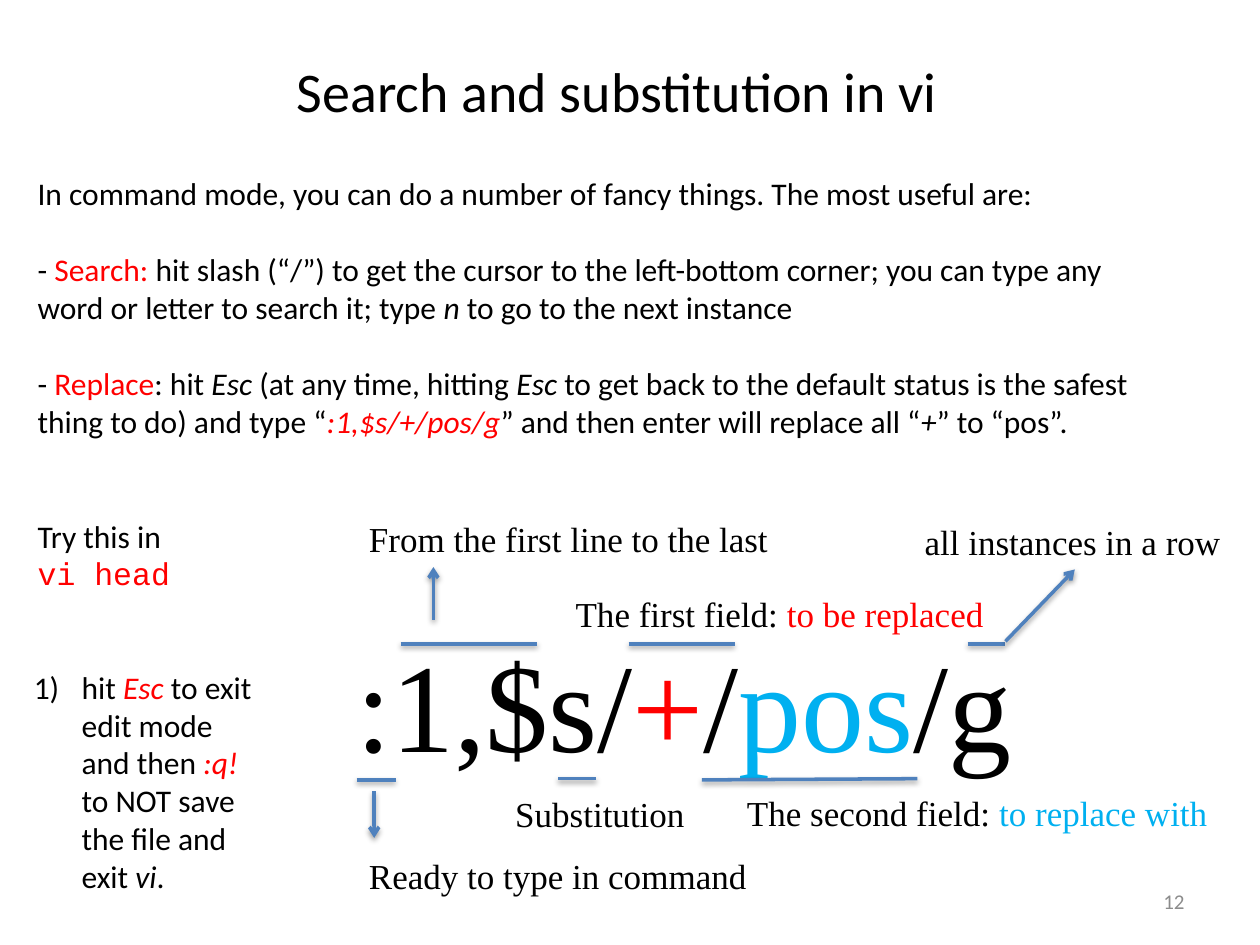
from lxml import etree
from pptx import Presentation
from pptx.dml.color import RGBColor
from pptx.enum.shapes import MSO_CONNECTOR
from pptx.enum.text import MSO_ANCHOR, MSO_AUTO_SIZE, PP_ALIGN
from pptx.oxml.ns import qn
from pptx.util import Inches, Pt

STRAIGHT = MSO_CONNECTOR.STRAIGHT
TOP, MIDDLE = MSO_ANCHOR.TOP, MSO_ANCHOR.MIDDLE
LEFT, CENTER, RIGHT = PP_ALIGN.LEFT, PP_ALIGN.CENTER, PP_ALIGN.RIGHT
NO_FIT = MSO_AUTO_SIZE.NONE
TITLE_ONLY = 5

COLORS = {"black": "000000", "red": "FF0000", "cyan": "00B0F0",
          "blue": "4F81BD", "gray": "8C8C8C"}
SANS, SERIF, MONO = "Calibri", "Times New Roman", "Courier New"
RED, CYAN = {"color": "red"}, {"color": "cyan"}
ITALIC = {"italic": True}
RED_ITALIC = {**RED, **ITALIC}

INTRO = [
    (0, [("In command mode, you can do a number of fancy things. "
          "The most useful are:", {})]),
    (22, [("- ", {}), ("Search:", RED),
          (" hit slash (“/”) to get the cursor to the left-bottom corner; you can "
           "type any word or letter to search it; type ", {}),
          ("n ", ITALIC), ("to go to the next instance", {})]),
    (22, [("- ", {}), ("Replace", RED), (": hit ", {}), ("Esc ", ITALIC),
          ("(at any time, hitting ", {}), ("Esc ", ITALIC),
          ("to get back to the default status is the safest thing to do) "
           "and type “", {}),
          (":1,$s/+/pos/g", RED_ITALIC),
          ("” and then enter will replace all “", {}), ("+", ITALIC),
          ("” to “pos”.", {})]),
    (44, [("Try this in", {})]),
    (0, [("vi head", {**RED, "font": MONO})]),
]
COMMAND = [(":1,$s/", {}), ("+", RED), ("/", {}), ("pos", CYAN), ("/g", {})]
EXIT_STEP = [("hit ", {}), ("Esc ", RED_ITALIC), ("to exit edit mode and then ", {}),
             (":q! ", RED_ITALIC), ("to NOT save the file and exit ", {}),
             ("vi", ITALIC), (".", {})]
LABELS = [
    (2.83, 6.73, 3.26, [("Ready to type in command", {})]),
    (2.83, 4.06, 3.45, [("From the first line to the last", {})]),
    (3.99, 6.24, 1.58, [("Substitution", {})]),
    (4.47, 4.65, 3.49, [("The first field: ", {}), ("to be replaced", RED)]),
    (5.83, 6.23, 3.92, [("The second field: ", {}), ("to replace with", CYAN)]),
    (7.24, 4.08, 2.58, [("all instances in a row", {})]),
]
MARKS = [(2.83, 6.19, 3.14, 6.19), (3.18, 5.11, 4.26, 5.11),
         (4.43, 6.18, 4.73, 6.18), (4.99, 5.11, 5.83, 5.11),
         (5.57, 6.19, 7.28, 6.18), (7.68, 5.11, 7.98, 5.11)]
ARROWS = [(2.97, 6.28, 2.97, 6.65), (3.44, 4.92, 3.44, 4.5),
          (7.98, 5.09, 8.53, 4.52)]


def write_runs(p, runs, size, font=SANS, color="black", align=LEFT, before=0):
    p.alignment = align
    p.space_before = Pt(before)
    for text, fmt in runs:
        r = p.add_run()
        r.text = text
        r.font.size = Pt(size)
        r.font.name = fmt.get("font", font)
        r.font.italic = fmt.get("italic", False)
        r.font.color.rgb = RGBColor.from_string(COLORS[fmt.get("color", color)])


def add_text(slide, box, paragraphs, size, wrap=True, anchor=TOP, **fmt):
    sp = slide.shapes.add_textbox(*map(Inches, box))
    tf = sp.text_frame
    tf.word_wrap = wrap
    tf.vertical_anchor = anchor
    for i, (before, runs) in enumerate(paragraphs):
        p = tf.add_paragraph() if i else tf.paragraphs[0]
        write_runs(p, runs, size, before=before, **fmt)
    return sp


def set_title(slide, box, text):
    sp = slide.shapes.title
    sp.left, sp.top, sp.width, sp.height = map(Inches, box)
    tf = sp.text_frame
    tf.auto_size = NO_FIT
    tf.word_wrap = False
    tf.vertical_anchor = TOP
    write_runs(tf.paragraphs[0], [(text, {})], 32, align=CENTER)


def number_paragraph(p, indent):
    pPr = p._p.get_or_add_pPr()
    pPr.set("marL", str(Inches(indent)))
    pPr.set("indent", str(-Inches(indent)))
    etree.SubElement(pPr, qn("a:buFont"), typeface="+mj-lt")
    etree.SubElement(pPr, qn("a:buAutoNum"), type="arabicParenR")


def add_line(slide, ends, arrow=False):
    line = slide.shapes.add_connector(STRAIGHT, *map(Inches, ends)).line
    line.color.rgb = RGBColor.from_string(COLORS["blue"])
    line.width = Pt(2)
    if arrow:
        etree.SubElement(line._get_or_add_ln(), qn("a:tailEnd"), type="arrow")


def main():
    prs = Presentation()
    prs.slide_width, prs.slide_height = Inches(10), Inches(7.5)
    slide = prs.slides.add_slide(prs.slide_layouts[TITLE_ONLY])
    set_title(slide, (2.21, 0.4, 5.38, 0.64), "Search and substitution in vi")
    add_text(slide, (7.17, 6.95, 2.33, 0.4), [(0, [("12", {})])], 12,
             anchor=MIDDLE, color="gray", align=RIGHT)
    add_text(slide, (0.2, 1.33, 9.15, 3.74), INTRO, 18)
    add_text(slide, (2.73, 4.92, 6.04, 1.31), [(0, COMMAND)], 72, font=SERIF)
    for ends in MARKS:
        add_line(slide, ends)
    for ends in ARROWS:
        add_line(slide, ends, arrow=True)
    for left, top, width, runs in LABELS:
        add_text(slide, (left, top, width, 0.44), [(0, runs)], 20,
                 wrap=False, font=SERIF)
    step = add_text(slide, (0.17, 5.25, 2, 1.92), [(0, EXIT_STEP)], 18)
    number_paragraph(step.text_frame.paragraphs[0], 0.38)
    prs.save("out.pptx")


if __name__ == "__main__":
    main()
